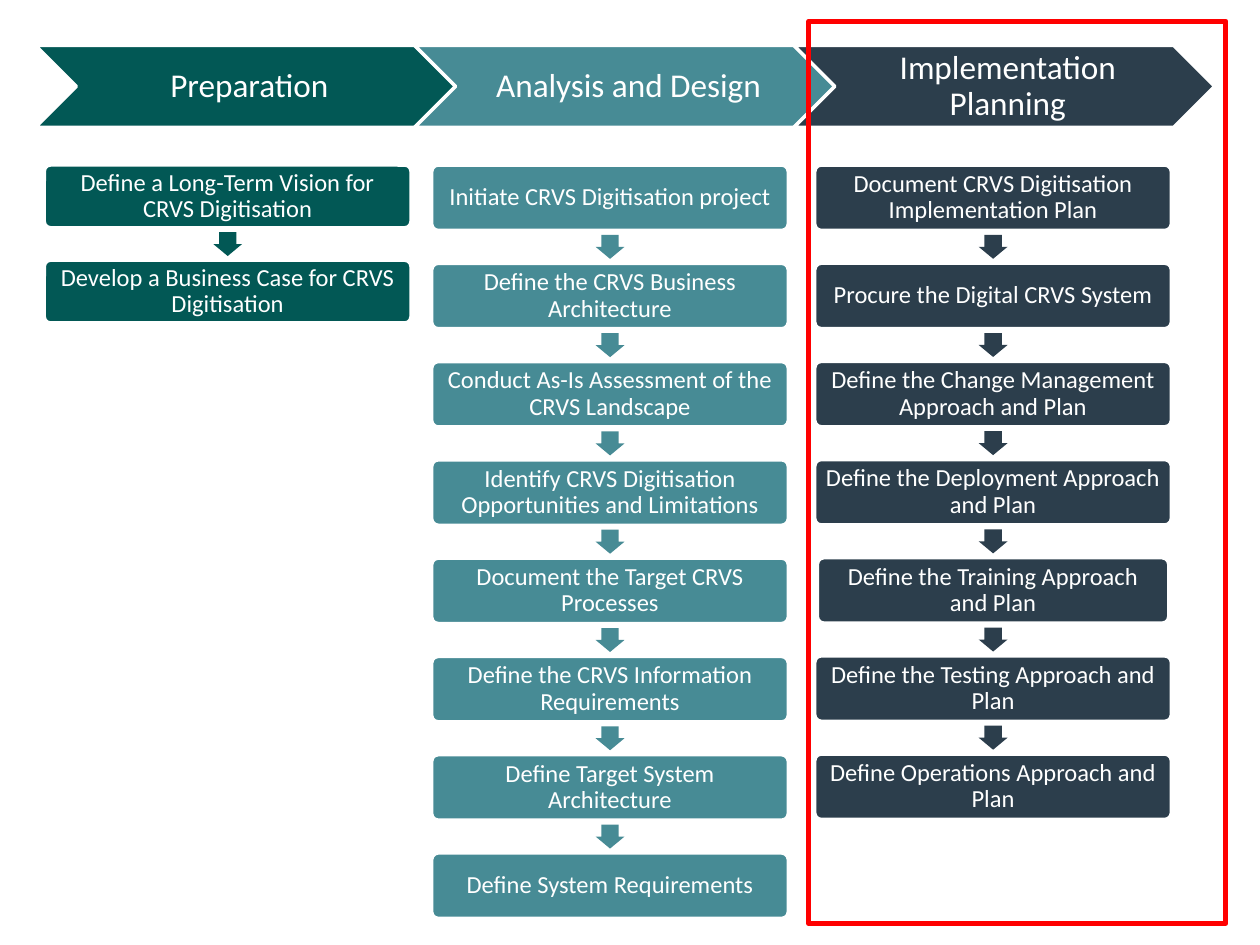
"""Builds the three-phase roadmap for digitising civil registration."""
from pptx import Presentation
from pptx.dml.color import RGBColor as RGB
from pptx.enum.shapes import MSO_SHAPE as Kind
from pptx.enum.text import MSO_ANCHOR as Anchor, PP_ALIGN as Align
from pptx.util import Pt

THEME = {
    "font": "Calibri", "head": 19, "body": 14, "text": "FFFFFF",
    "edge": "FFFFFF", "frame": "FF0000",
}
PHASES = [
    {"name": "Preparation", "fill": "025855",
     "left": 25.3, "wide": 209.6, "high": 35.9, "pitch": 54.4,
     "steps": ["Define a Long-Term Vision for CRVS Digitisation",
               "Develop a Business Case for CRVS Digitisation"]},
    {"name": "Analysis and Design", "fill": "478B95",
     "left": 246.7, "wide": 203.8, "high": 37.4, "pitch": 56.16,
     "steps": ["Initiate CRVS Digitisation project",
               "Define the CRVS Business Architecture",
               "Conduct As-Is Assessment of the CRVS Landscape",
               "Identify CRVS Digitisation Opportunities and Limitations",
               "Document the Target CRVS Processes",
               "Define the CRVS Information Requirements",
               "Define Target System Architecture",
               "Define System Requirements"]},
    {"name": "Implementation Planning", "fill": "2C3E4C",
     "left": 465.6, "wide": 203.8, "high": 37.4, "pitch": 56.1,
     "steps": ["Document CRVS Digitisation Implementation Plan",
               "Procure the Digital CRVS System",
               "Define the Change Management Approach and Plan",
               "Define the Deployment Approach and Plan",
               "Define the Training Approach and Plan",
               "Define the Testing Approach and Plan",
               "Define Operations Approach and Plan"]},
]
TRIM = {"Define the Training Approach and Plan": 1.5}
HEAD = {"left": 20.2, "top": 25.9, "wide": 240.6, "high": 46.9, "pitch": 216.7}
TOP = 94.3
ARROW = (13.7, 16.5)
FRAME = (462.2, 12.2, 238.3, 515.5)


def shape(slide, kind, box, fill=None, edge=None, width=2, adjust=()):
    item = slide.shapes.add_shape(kind, *map(Pt, box))
    item.shadow.inherit = False
    for i, value in enumerate(adjust):
        item.adjustments[i] = value
    if fill:
        item.fill.solid()
        item.fill.fore_color.rgb = RGB.from_string(fill)
    else:
        item.fill.background()
    if edge:
        item.line.color.rgb = RGB.from_string(edge)
        item.line.width = Pt(width)
    else:
        item.line.fill.background()
    return item


def label(item, text, size, pads):
    frame = item.text_frame
    frame.word_wrap = True
    frame.vertical_anchor = Anchor.MIDDLE
    (frame.margin_left, frame.margin_top,
     frame.margin_right, frame.margin_bottom) = map(Pt, pads)
    para = frame.paragraphs[0]
    para.text = text
    para.alignment = Align.CENTER
    para.line_spacing = 0.9
    para.font.name = THEME["font"]
    para.font.size = Pt(size)
    para.font.color.rgb = RGB.from_string(THEME["text"])


def header(slide, index, phase):
    box = (HEAD["left"] + index * HEAD["pitch"], HEAD["top"],
           HEAD["wide"], HEAD["high"])
    item = shape(slide, Kind.CHEVRON, box, phase["fill"], THEME["edge"],
                 adjust=[0.5])
    label(item, phase["name"], THEME["head"], (6, 2, 2, 2))


def column(slide, phase):
    left, wide, high, pitch = (phase[k] for k in ("left", "wide", "high", "pitch"))
    long, thick = ARROW
    for row, step in enumerate(phase["steps"]):
        top = TOP + row * pitch
        if row:
            mid = top - (pitch - high) / 2
            box = (left + (wide - long) / 2, mid - thick / 2, long, thick)
            arrow = shape(slide, Kind.RIGHT_ARROW, box, phase["fill"],
                          adjust=[0.6, 0.5])
            arrow.rotation = 90
        trim = TRIM.get(step, 0)
        item = shape(slide, Kind.ROUNDED_RECTANGLE,
                     (left + trim, top, wide - 2 * trim, high),
                     phase["fill"], THEME["edge"], adjust=[0.1])
        label(item, step, THEME["body"], (4.2,) * 4)


def main():
    deck = Presentation()
    deck.slide_width, deck.slide_height = Pt(720), Pt(540)
    slide = deck.slides.add_slide(deck.slide_layouts[6])
    for index, phase in enumerate(PHASES):
        header(slide, index, phase)
        column(slide, phase)
    shape(slide, Kind.RECTANGLE, FRAME, edge=THEME["frame"], width=3)
    deck.save("out.pptx")


if __name__ == "__main__":
    main()
